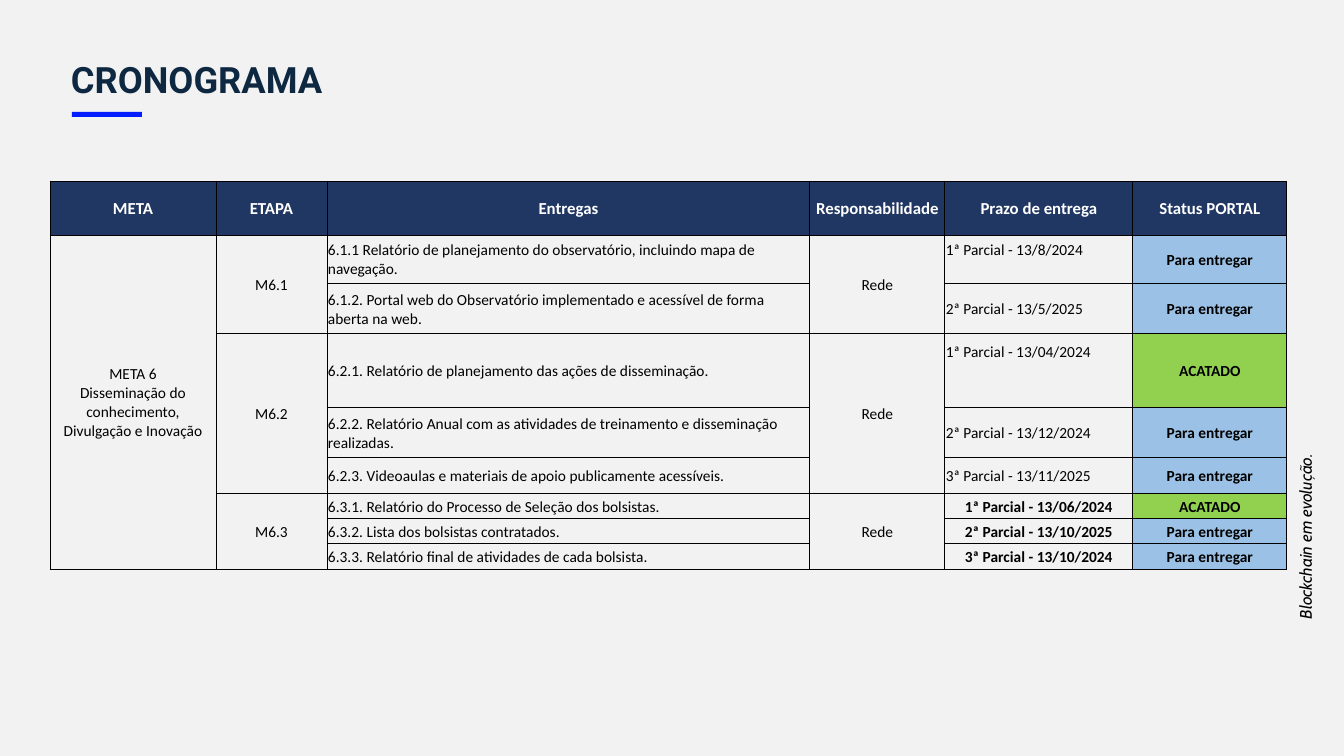
from lxml.etree import SubElement
from pptx import Presentation
from pptx.dml.color import RGBColor
from pptx.enum.shapes import MSO_SHAPE as Shape
from pptx.enum.text import MSO_ANCHOR as Anchor, PP_ALIGN as Align
from pptx.oxml.ns import qn
from pptx.util import Pt

EMU_PER_PX = 914400 / 100.8
COLORS = {
    "background": "F2F2F2", "accent": "001DFF", "title": "0E2841",
    "header": "203764", "white": "FFFFFF", "black": "000000",
    "Para entregar": "9BC2E6", "ACATADO": "92D050",
}


def px(length):
    return round(length * EMU_PER_PX)


def rgb(name):
    return RGBColor.from_string(COLORS[name])


class SlideBuilder:
    def __init__(self, presentation):
        self.slide = presentation.slides.add_slide(presentation.slide_layouts[6])
        self.slide.background.fill.solid()
        self.slide.background.fill.fore_color.rgb = rgb("background")

    def add_runs(self, paragraph, text, font, size, color="black", bold=False, italic=False):
        for index, line in enumerate(text.split("\n")):
            if index:
                paragraph.add_line_break()
            run = paragraph.add_run()
            run.text = line
            run.font.name, run.font.size = font, Pt(size)
            run.font.bold, run.font.italic = bold, italic
            run.font.color.rgb = rgb(color)

    def bar(self, left, top, width, height, color):
        shape = self.slide.shapes.add_shape(
            Shape.RECTANGLE, px(left), px(top), px(width), px(height))
        shape.shadow.inherit = False
        shape.fill.solid()
        shape.fill.fore_color.rgb = rgb(color)
        shape.line.fill.background()

    def text(self, left, top, width, height, text, margins=(0, 0),
             rotation=0, spacing=1.0, **style):
        shape = self.slide.shapes.add_textbox(px(left), px(top), px(width), px(height))
        shape.rotation = rotation
        frame = shape.text_frame
        frame.word_wrap = True
        frame.margin_left = frame.margin_right = px(margins[0])
        frame.margin_top = frame.margin_bottom = px(margins[1])
        paragraph = frame.paragraphs[0]
        paragraph.line_spacing = spacing
        self.add_runs(paragraph, text, **style)

    def table(self, left, top, columns, rows):
        frame = self.slide.shapes.add_table(
            len(rows), len(columns), px(left), px(top), px(sum(columns)), px(sum(rows)))
        table = frame.table
        table.first_row = table.horz_banding = False
        for column, width in zip(table.columns, columns):
            column.width = px(width)
        for row, height in zip(table.rows, rows):
            row.height = px(height)
        for cell in table.iter_cells():
            self.borders(cell)
            cell.fill.background()
        return table

    def borders(self, cell):
        properties = cell._tc.get_or_add_tcPr()
        for side in ("a:lnL", "a:lnR", "a:lnT", "a:lnB"):
            line = SubElement(properties, qn(side), w=str(Pt(0.75)))
            fill = SubElement(line, qn("a:solidFill"))
            SubElement(fill, qn("a:srgbClr"), val=COLORS["black"])

    def cell(self, cell, text, size=11, color="black", bold=False,
             align=Align.CENTER, fill=None, bottom=0):
        cell.vertical_anchor = Anchor.MIDDLE
        cell.margin_left = cell.margin_right = cell.margin_top = px(1)
        cell.margin_bottom = px(bottom)
        if fill:
            cell.fill.solid()
            cell.fill.fore_color.rgb = rgb(fill)
        paragraph = cell.text_frame.paragraphs[0]
        paragraph.alignment = align
        self.add_runs(paragraph, text, "Calibri", size, color, bold)


HEADERS = ["META", "ETAPA", "Entregas", "Responsabilidade", "Prazo de entrega", "Status PORTAL"]
COLUMN_WIDTHS = [166, 111, 483, 135, 188, 154]
ROW_HEIGHTS = [54, 49, 50, 74, 50, 36, 25, 25, 26]
LINE_HEIGHT = 19
GOAL = "META 6\nDisseminação do conhecimento, Divulgação e Inovação"
OWNER = "Rede"

# Each stage: name, whether its deadlines are bold and centred, and its deliveries
# (text, deadline, status, lines by which the deadline is raised)
STAGES = [
    ("M6.1", False, [
        ("6.1.1 Relatório de planejamento do observatório, incluindo mapa de navegação.",
         "1ª Parcial - 13/8/2024", "Para entregar", 1),
        ("6.1.2. Portal web do Observatório implementado e acessível de forma aberta na web.",
         "2ª Parcial - 13/5/2025", "Para entregar", 0),
    ]),
    ("M6.2", False, [
        ("6.2.1. Relatório de planejamento das ações de disseminação.",
         "1ª Parcial - 13/04/2024", "ACATADO", 2),
        ("6.2.2. Relatório Anual com as atividades de treinamento e disseminação realizadas.",
         "2ª Parcial - 13/12/2024", "Para entregar", 0),
        ("6.2.3. Videoaulas e materiais de apoio publicamente acessíveis.",
         "3ª Parcial - 13/11/2025", "Para entregar", 0),
    ]),
    ("M6.3", True, [
        ("6.3.1. Relatório do Processo de Seleção dos bolsistas.",
         "1ª Parcial - 13/06/2024", "ACATADO", 0),
        ("6.3.2. Lista dos bolsistas contratados.",
         "2ª Parcial - 13/10/2025", "Para entregar", 0),
        ("6.3.3. Relatório final de atividades de cada bolsista.",
         "3ª Parcial - 13/10/2024", "Para entregar", 0),
    ]),
]


def main():
    presentation = Presentation()
    presentation.slide_width, presentation.slide_height = px(1344), px(756)
    builder = SlideBuilder(presentation)

    # Title and side note
    builder.bar(72, 112, 70, 5, "accent")
    builder.text(1207, 516, 196, 30, "Blockchain em evolução.", margins=(10, 5),
                 rotation=270, font="Cabin", size=12, italic=True)
    builder.text(71, 69, 1203, 33, "CRONOGRAMA", spacing=0.7,
                 font="Roboto", size=25.9, color="title", bold=True)

    # Schedule header and goal
    table = builder.table(50, 181, COLUMN_WIDTHS, ROW_HEIGHTS)
    for column, header in enumerate(HEADERS):
        builder.cell(table.cell(0, column), header, size=12, color="white",
                     bold=True, fill="header")
    table.cell(1, 0).merge(table.cell(len(ROW_HEIGHTS) - 1, 0))
    builder.cell(table.cell(1, 0), GOAL)

    # Stages and their deliveries
    row = 1
    for stage, emphasis, deliveries in STAGES:
        for column, text in ((1, stage), (3, OWNER)):
            table.cell(row, column).merge(table.cell(row + len(deliveries) - 1, column))
            builder.cell(table.cell(row, column), text)
        for delivery, deadline, status, raised in deliveries:
            builder.cell(table.cell(row, 2), delivery, align=Align.LEFT)
            builder.cell(table.cell(row, 4), deadline, bold=emphasis,
                         align=Align.CENTER if emphasis else Align.LEFT,
                         bottom=raised * LINE_HEIGHT)
            builder.cell(table.cell(row, 5), status, bold=True, fill=status)
            row += 1

    presentation.save("out.pptx")


if __name__ == "__main__":
    main()
